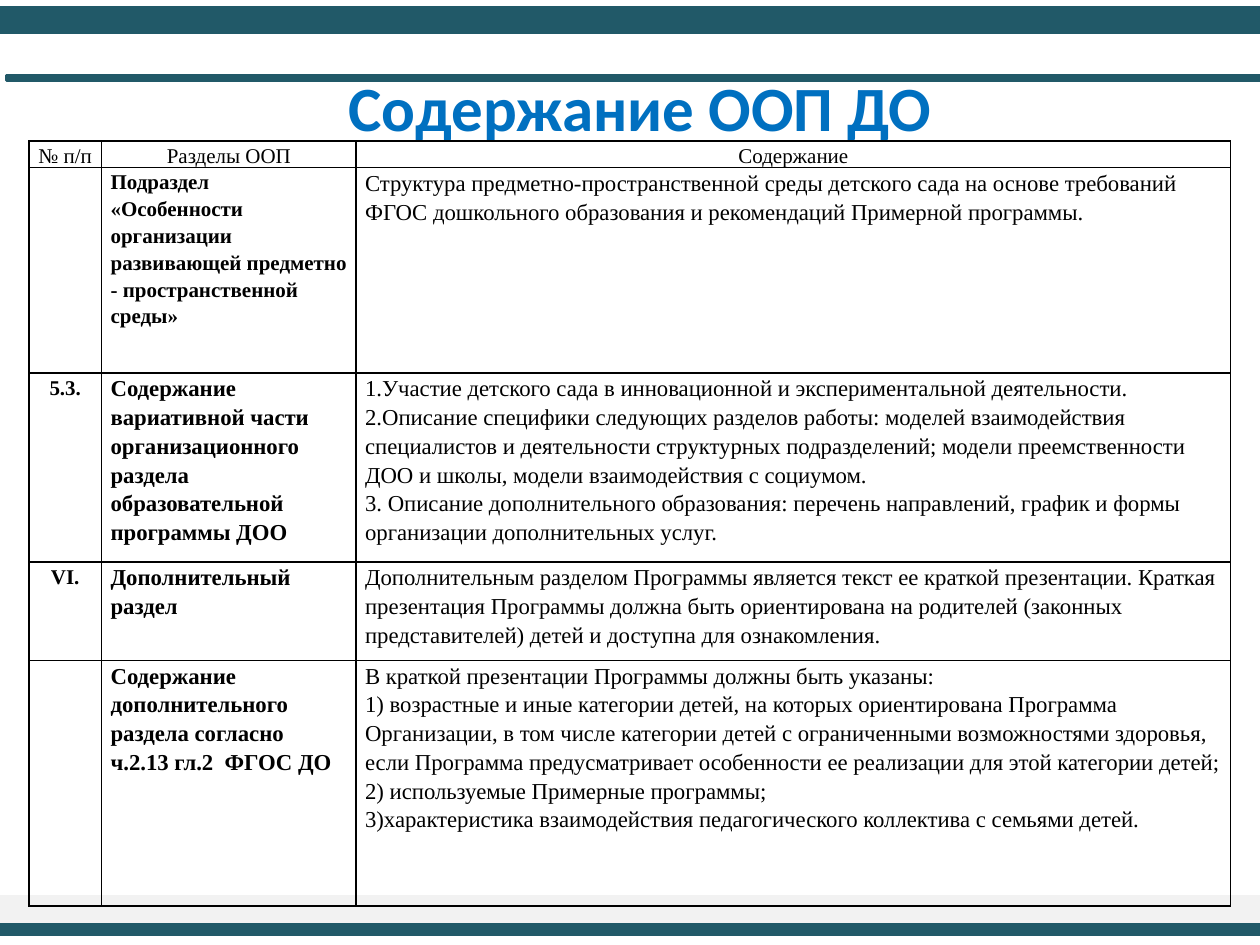
"""Build the slide with the contents table of the preschool programme."""
import pptx
import pptx.dml.color
import pptx.enum.shapes
import pptx.enum.text
import pptx.oxml
import pptx.oxml.ns
import pptx.util

Cm = pptx.util.Cm
Pt = pptx.util.Pt
ALIGN = pptx.enum.text.PP_ALIGN
ANCHOR = pptx.enum.text.MSO_ANCHOR

TEAL, PALE, BLUE, BLACK = "215968", "F2F2F2", "0070C0", "000000"
BARS = [
    (0, 18.08, 0.76, PALE),
    (0, 0.15, 0.51, TEAL),
    (0, 18.64, 0.2, TEAL),
    (0.13, 1.52, 0.1, TEAL),
]
COLUMN_WIDTHS = [1.47, 5.13, 17.63]
ROW_HEIGHTS = [0.53, 4.14, 3.81, 1.98, 4.95]
HEADER = ["№ п/п", "Разделы ООП", "Содержание"]
SECTIONS = [
    ("", "Подраздел «Особенности организации развивающей предметно - "
     "пространственной среды»", 12,
     ["Структура предметно-пространственной среды детского сада на основе требований "
      "ФГОС дошкольного образования и рекомендаций Примерной программы."]),
    ("5.3.", "Содержание вариативной части организационного раздела "
     "образовательной программы ДОО", 13,
     ["1.Участие детского сада в инновационной и экспериментальной деятельности.",
      "2.Описание специфики следующих разделов работы: моделей взаимодействия "
      "специалистов и деятельности структурных подразделений; модели преемственности "
      "ДОО и школы, модели взаимодействия с социумом.",
      "3. Описание дополнительного образования: перечень направлений, график и формы  "
      "организации дополнительных услуг."]),
    ("VI.", "Дополнительный раздел", 13,
     ["Дополнительным разделом Программы является текст ее краткой презентации. Краткая "
      "презентация Программы должна быть ориентирована на родителей (законных "
      "представителей) детей и доступна для ознакомления."]),
    ("", "Содержание дополнительного раздела согласно ч.2.13 гл.2  ФГОС ДО", 13,
     ["В краткой презентации Программы должны быть указаны:",
      "1) возрастные и иные категории детей, на которых ориентирована Программа "
      "Организации, в том числе категории детей с ограниченными возможностями здоровья, "
      "если Программа предусматривает особенности ее реализации для этой категории детей;",
      "2) используемые Примерные программы;",
      "3)характеристика взаимодействия педагогического коллектива с семьями детей."]),
]


def color(value):
    """Turn a hex string into a colour."""
    return pptx.dml.color.RGBColor.from_string(value)


def apply(target, values):
    """Set attributes of an object from a dict."""
    for name, value in values.items():
        setattr(target, name, value)


def add_bar(slide, left, top, height, fill):
    """Draw one horizontal bar across the slide."""
    shape = slide.shapes.add_shape(
        pptx.enum.shapes.MSO_SHAPE.RECTANGLE, Cm(left), Cm(top), Cm(25.4), Cm(height))
    shape.shadow.inherit = False
    shape.fill.solid()
    shape.fill.fore_color.rgb = color(fill)
    shape.line.color.rgb = color(fill)
    shape.line.width = Pt(2)


def write_paragraph(paragraph, text, font_values, paragraph_values, text_color):
    """Write one formatted run into a paragraph."""
    apply(paragraph, paragraph_values)
    run = paragraph.add_run()
    run.text = text
    apply(run.font, font_values)
    run.font.color.rgb = color(text_color)


def format_title(slide, text):
    """Place and format the slide title."""
    title = slide.shapes.title
    apply(title, {"left": Cm(1.47), "top": Cm(1.14), "width": Cm(22.86), "height": Cm(2.01)})
    apply(title.text_frame, {"vertical_anchor": ANCHOR.MIDDLE, "word_wrap": True,
                             "auto_size": pptx.enum.text.MSO_AUTO_SIZE.NONE})
    write_paragraph(title.text_frame.paragraphs[0], text,
                    {"name": "Calibri", "size": Pt(36), "bold": True},
                    {"alignment": ALIGN.CENTER}, BLUE)


def add_borders(cell):
    """Give a cell thin black lines on all four sides."""
    properties = cell._tc.get_or_add_tcPr()
    for side in ("lnL", "lnR", "lnT", "lnB"):
        properties.append(pptx.oxml.parse_xml(
            f'<a:{side} {pptx.oxml.ns.nsdecls("a")} w="{Pt(1)}"><a:solidFill>'
            f'<a:srgbClr val="{BLACK}"/></a:solidFill></a:{side}>'))


def fill_cell(cell, texts, size, bold, alignment):
    """Format a cell and write its paragraphs."""
    add_borders(cell)
    cell.fill.background()
    apply(cell, {"margin_left": Cm(0.18), "margin_right": Cm(0.18), "margin_top": 0,
                 "margin_bottom": 0, "vertical_anchor": ANCHOR.TOP})
    for index, text in enumerate(texts):
        frame = cell.text_frame
        paragraph = frame.add_paragraph() if index else frame.paragraphs[0]
        write_paragraph(paragraph, text,
                        {"name": "Times New Roman", "size": Pt(size), "bold": bold},
                        {"alignment": alignment, "line_spacing": 1.15}, BLACK)


def add_contents_table(slide):
    """Add the table of programme sections."""
    table = slide.shapes.add_table(
        len(ROW_HEIGHTS), len(COLUMN_WIDTHS), Cm(0.58), Cm(2.84),
        Cm(sum(COLUMN_WIDTHS)), Cm(sum(ROW_HEIGHTS))).table
    apply(table, {"first_row": False, "horz_banding": False})
    for column, width in zip(table.columns, COLUMN_WIDTHS):
        column.width = Cm(width)
    for row, height in zip(table.rows, ROW_HEIGHTS):
        row.height = Cm(height)
    for index, text in enumerate(HEADER):
        fill_cell(table.cell(0, index), [text], 12, False, ALIGN.CENTER)
    for row, (number, name, name_size, content) in enumerate(SECTIONS, 1):
        fill_cell(table.cell(row, 0), [number] if number else [], 12, True, ALIGN.CENTER)
        fill_cell(table.cell(row, 1), [name], name_size, True, ALIGN.LEFT)
        fill_cell(table.cell(row, 2), content, 13, False, ALIGN.LEFT)


def main():
    """Build and save the presentation."""
    presentation = pptx.Presentation()
    apply(presentation, {"slide_width": Cm(25.4), "slide_height": Cm(19.05)})
    slide = presentation.slides.add_slide(presentation.slide_layouts[5])
    for bar in BARS:
        add_bar(slide, *bar)
    format_title(slide, "Содержание ООП ДО")
    add_contents_table(slide)
    presentation.save("out.pptx")


if __name__ == "__main__":
    main()
